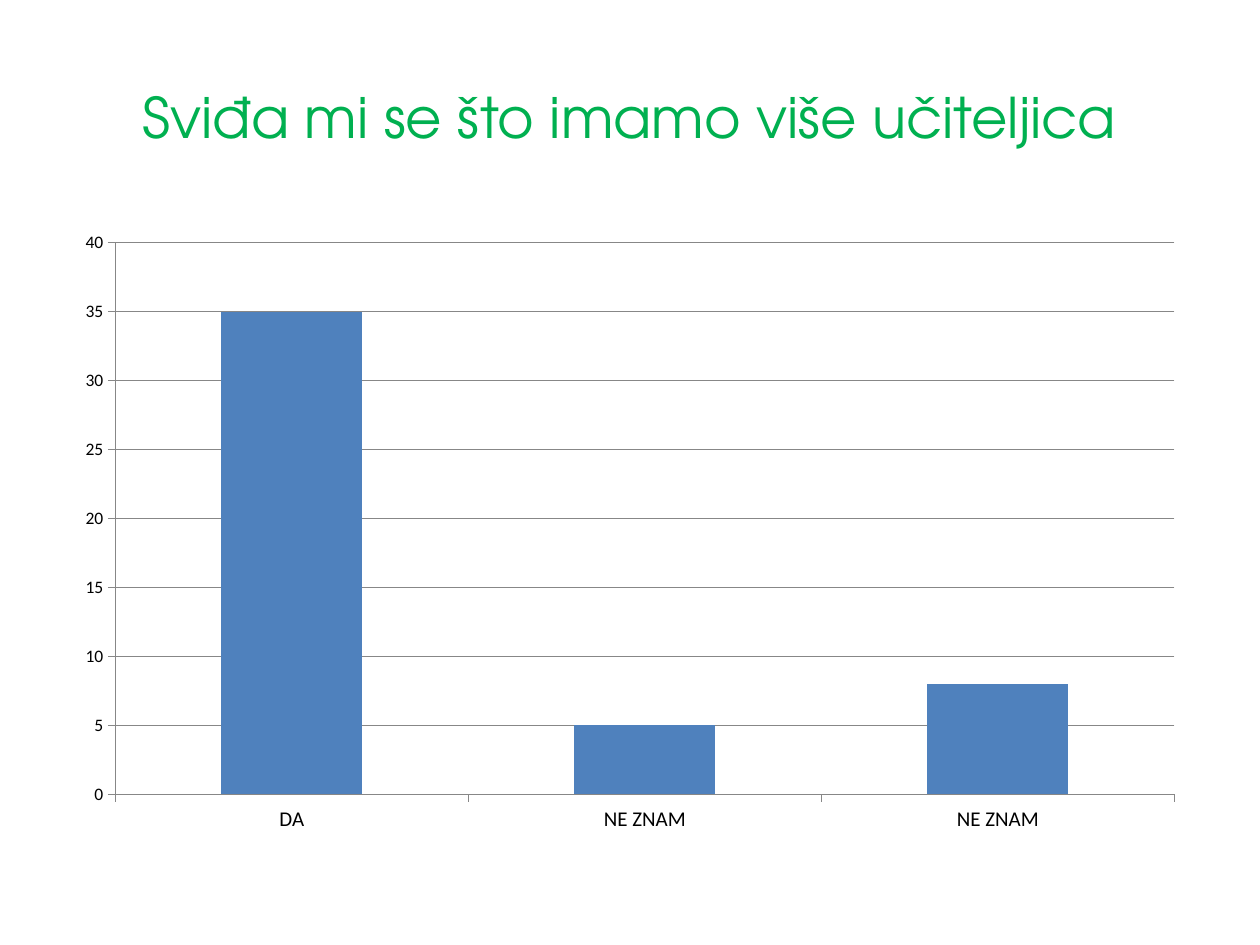
from pptx import Presentation
from pptx.chart.data import CategoryChartData
from pptx.dml.color import RGBColor
from pptx.enum.chart import XL_CHART_TYPE, XL_TICK_MARK
from pptx.enum.text import MSO_ANCHOR, PP_ALIGN
from pptx.util import Inches, Pt

WIDTH, HEIGHT = 10, 7.5
# The slide is divided into cells of 0.5 by 0.05 inches.
COLUMNS, ROWS = 20, 150


def color(hex_string):
    return RGBColor.from_string(hex_string)


class SlideBuilder:
    title_font, chart_font = "TeX Gyre Adventor", "Calibri"
    title_color, text_color = "00B050", "000000"
    bar_color, line_color = "4F81BD", "878787"

    def __init__(self, page):
        self.page = page

    def area(self, column, row, columns, rows):
        """Turn grid cells into left, top, width and height."""
        across, down = WIDTH / COLUMNS, HEIGHT / ROWS
        return (Inches(column * across), Inches(row * down),
                Inches(columns * across), Inches(rows * down))

    def title(self, text, *cells):
        box = self.page.shapes.title
        box.left, box.top, box.width, box.height = self.area(*cells)
        frame = box.text_frame
        frame.text = text
        frame.word_wrap = True
        frame.vertical_anchor = MSO_ANCHOR.MIDDLE
        para = frame.paragraphs[0]
        para.alignment = PP_ALIGN.CENTER
        self.style_font(para.runs[0].font, self.title_font, 32, self.title_color)

    def style_font(self, font, name, size, hex_string):
        font.name, font.size = name, Pt(size)
        font.color.rgb = color(hex_string)

    def style_line(self, line):
        line.color.rgb = color(self.line_color)
        line.width = Pt(0.75)

    def column_chart(self, categories, values, *cells):
        data = CategoryChartData()
        data.categories = categories
        data.add_series("Series 1", values)
        chart = self.page.shapes.add_chart(
            XL_CHART_TYPE.COLUMN_CLUSTERED, *self.area(*cells), data).chart
        chart.has_legend = chart.has_title = False
        self.style_font(chart.font, self.chart_font, 10, self.text_color)

        plot = chart.plots[0]
        plot.gap_width = 150
        plot.vary_by_categories = False
        fill = plot.series[0].format.fill
        fill.solid()
        fill.fore_color.rgb = color(self.bar_color)

        for axis, size in ((chart.category_axis, 12), (chart.value_axis, 10)):
            axis.major_tick_mark = XL_TICK_MARK.OUTSIDE
            axis.minor_tick_mark = XL_TICK_MARK.NONE
            self.style_line(axis.format.line)
            self.style_font(axis.tick_labels.font, self.chart_font, size,
                            self.text_color)
        scale = chart.value_axis
        scale.minimum_scale, scale.maximum_scale, scale.major_unit = 0, 40, 5
        scale.has_major_gridlines = True
        self.style_line(scale.major_gridlines.format.line)


def main():
    deck = Presentation()
    deck.slide_width, deck.slide_height = Inches(WIDTH), Inches(HEIGHT)
    title_only = deck.slide_layouts[5]
    builder = SlideBuilder(deck.slides.add_slide(title_only))
    builder.title("Sviđa mi se što imamo više učiteljica", 1, 6, 18, 25)
    builder.column_chart(["DA", "NE ZNAM", "NE ZNAM"], [35, 5, 8], 1, 35, 18, 99)
    deck.save("out.pptx")


if __name__ == "__main__":
    main()
